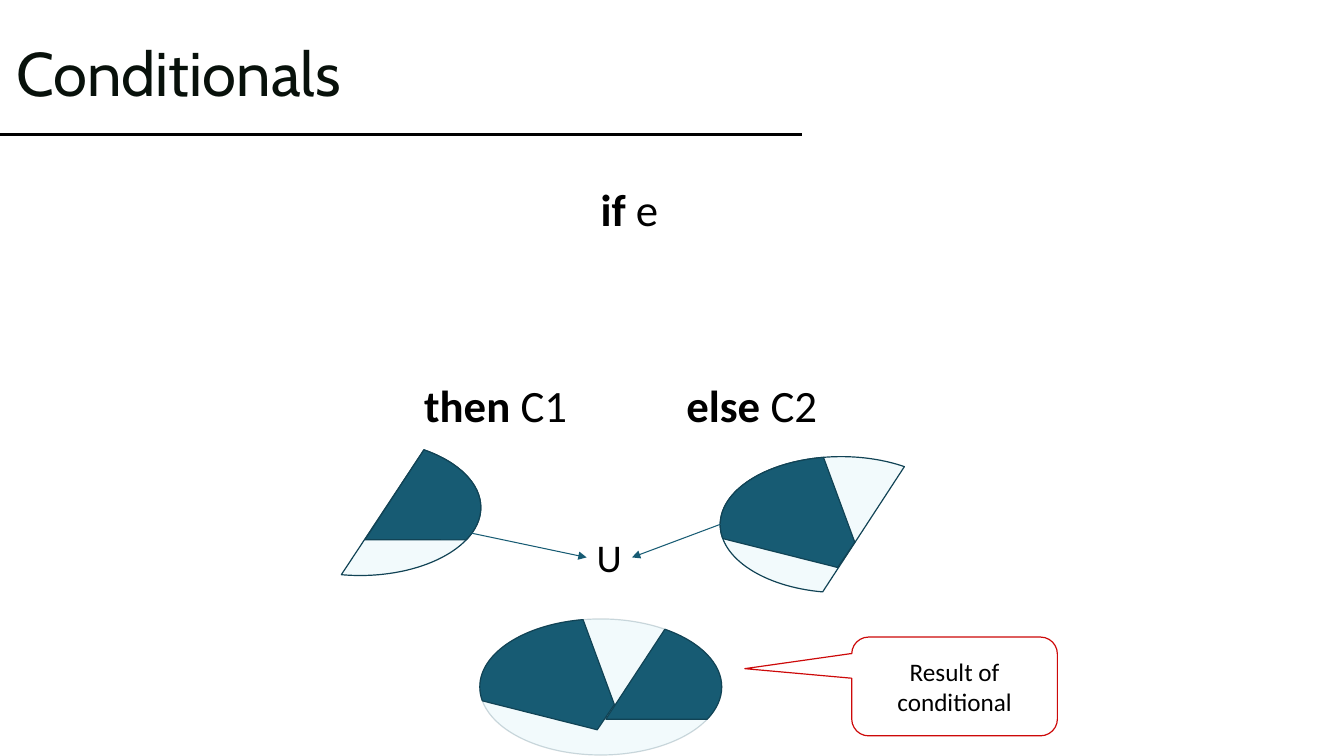
from itertools import pairwise
from math import cos, radians, sin, tan

from lxml.etree import SubElement
from pptx import Presentation
from pptx.dml.color import RGBColor
from pptx.enum.shapes import MSO_CONNECTOR as Link, MSO_SHAPE as Shape
from pptx.enum.text import MSO_ANCHOR as Anchor, PP_ALIGN as Align
from pptx.oxml.ns import qn
from pptx.util import Inches, Pt

COLUMNS, ROWS = 133.33, 75
CELL = Inches(0.1)
RADIUS_X, RADIUS_Y = 12, 6.75
DARK, PALE, OUTLINE = "175B73", "C1E6F3", "114355"
THEN_HALF = dict(start=-58, end=98.8)
ELSE_HALF = dict(start=98.8, end=301.5)
THEN_RESULT = dict(start=-58, end=28.4, corners=[(0.5, 3.2)])
ELSE_RESULT = dict(start=168.2, end=261.6, corners=[(1.35, 1.75), (-0.35, 4.25)])


def grid(*cells):
    return [round(cell * CELL) for cell in cells]


def color(value):
    return RGBColor.from_string(value)


def fade(fill_owner, percent):
    tint = fill_owner.find(".//" + qn("a:srgbClr"))
    SubElement(tint, qn("a:alpha"), val=str(percent * 1000))


def paint(shape, fill, line, opacity=100):
    shape.shadow.inherit = False
    shape.fill.solid()
    shape.fill.fore_color.rgb = color(fill)
    shape.line.color.rgb = color(line)
    shape.line.width = Pt(0.85)
    if opacity < 100:
        fade(shape.element.spPr.find(qn("a:solidFill")), opacity)


def write(shape, spans, size, font="Calibri", ink="000000", wrap=True,
          anchor=Anchor.TOP, align=Align.LEFT, spacing=None):
    frame = shape.text_frame
    frame.word_wrap = wrap
    frame.vertical_anchor = anchor
    para = frame.paragraphs[0]
    para.alignment = align
    if spacing:
        para.line_spacing = spacing
    for text, bold in spans:
        span = para.add_run()
        span.text = text
        span.font.size = Pt(size)
        span.font.name = font
        span.font.bold = bold
        span.font.color.rgb = color(ink)


def label(page, box, spans, size=32, **style):
    write(page.shapes.add_textbox(*grid(*box)), spans, size, **style)


def rule(page, start, end, ink, width, arrow=False):
    line = page.shapes.add_connector(Link.STRAIGHT, *grid(*start, *end))
    line.line.color.rgb = color(ink)
    line.line.width = Pt(width)
    if arrow:
        SubElement(line.line._get_or_add_ln(), qn("a:tailEnd"), type="triangle")
    SubElement(line.element.spPr, qn("a:effectLst"))


def on_oval(center, angle, pull=0):
    x = cos(angle) - pull * sin(angle)
    y = sin(angle) + pull * cos(angle)
    return grid(center[0] + RADIUS_X * x, center[1] + RADIUS_Y * y)


def segment(page, center, start, end, corners=(), fill=DARK, opacity=100):
    quarters = [angle for angle in range(-90, 361, 90) if start < angle < end]
    angles = [radians(angle) for angle in (start, *quarters, end)]
    points = [on_oval(center, angle) for angle in angles]
    points += [grid(center[0] + x, center[1] + y) for x, y in corners]
    builder = page.shapes.build_freeform(*points[0])
    builder.add_line_segments(points[1:], close=True)
    shape = builder.convert_to_shape()
    outline = shape.element.find(".//" + qn("a:path"))
    for side, (first, last) in zip(outline.findall(qn("a:lnTo")), pairwise(angles)):
        pull = 4 / 3 * tan((last - first) / 4)
        curve = SubElement(outline, qn("a:cubicBezTo"))
        for x, y in (on_oval(center, first, pull), on_oval(center, last, -pull),
                     on_oval(center, last)):
            SubElement(curve, qn("a:pt"), x=str(x - shape.left), y=str(y - shape.top))
        outline.replace(side, curve)
    paint(shape, fill, OUTLINE, opacity)


def header(page, box):
    left, top, width, height = box
    rule(page, (left, top + height), (left + width, top + height), "000000", 2.25)
    label(page, (left + 0.63, top + 0.3, 75.1, 14.5), [("Conditionals", False)], 44,
          font="Cabin", ink="08110B", anchor=Anchor.MIDDLE, spacing=0.9)


def branch(page, center, half, result):
    segment(page, center, fill=PALE, opacity=20, **half)
    segment(page, center, **result)


def union(page, box):
    left, top, width, height = box
    center = left + width / 2, top + height / 2
    oval = page.shapes.add_shape(Shape.OVAL, *grid(*box))
    paint(oval, PALE, "0E4153", 20)
    fade(oval.line._get_or_add_ln(), 20)
    segment(page, center, **THEN_RESULT)
    segment(page, center, **ELSE_RESULT)


def callout(page, box):
    bubble = page.shapes.add_shape(Shape.ROUNDED_RECTANGULAR_CALLOUT, *grid(*box))
    for index, value in enumerate((-1.02, -0.18, 0.17)):
        bubble.adjustments[index] = value
    paint(bubble, "FFFFFF", "CD0909")
    write(bubble, [("Result of conditional", False)], 18,
          anchor=Anchor.MIDDLE, align=Align.CENTER)


def main():
    deck = Presentation()
    deck.slide_width, deck.slide_height = grid(COLUMNS, ROWS)
    page = deck.slides.add_slide(deck.slide_layouts[6])
    header(page, (0, 0, 79.6, 13.33))
    for box, keyword, operand in (
        ((58.6, 17.55, 8.8, 6.4), "if", " e"),
        ((41.1, 37, 17.4, 6.4), "then", " C1"),
        ((67.1, 37, 16.1, 6.4), "else", " C2"),
    ):
        label(page, box, [(keyword, True), (operand, False)], wrap=False)
    branch(page, (35.7, 50.35), THEN_HALF, THEN_RESULT)
    branch(page, (83.45, 52.05), ELSE_HALF, ELSE_RESULT)
    label(page, (58.2, 52.4, 4.5, 5.7), [("U", False)], 28, wrap=False)
    rule(page, (46.8, 52.9), (58.2, 55.3), DARK, 0.75, arrow=True)
    rule(page, (71.5, 52), (62.7, 55.3), DARK, 0.75, arrow=True)
    union(page, (47.6, 61.4, 2 * RADIUS_X, 2 * RADIUS_Y))
    callout(page, (84.5, 63.2, 20.4, 9.8))
    deck.save("out.pptx")


if __name__ == "__main__":
    main()
